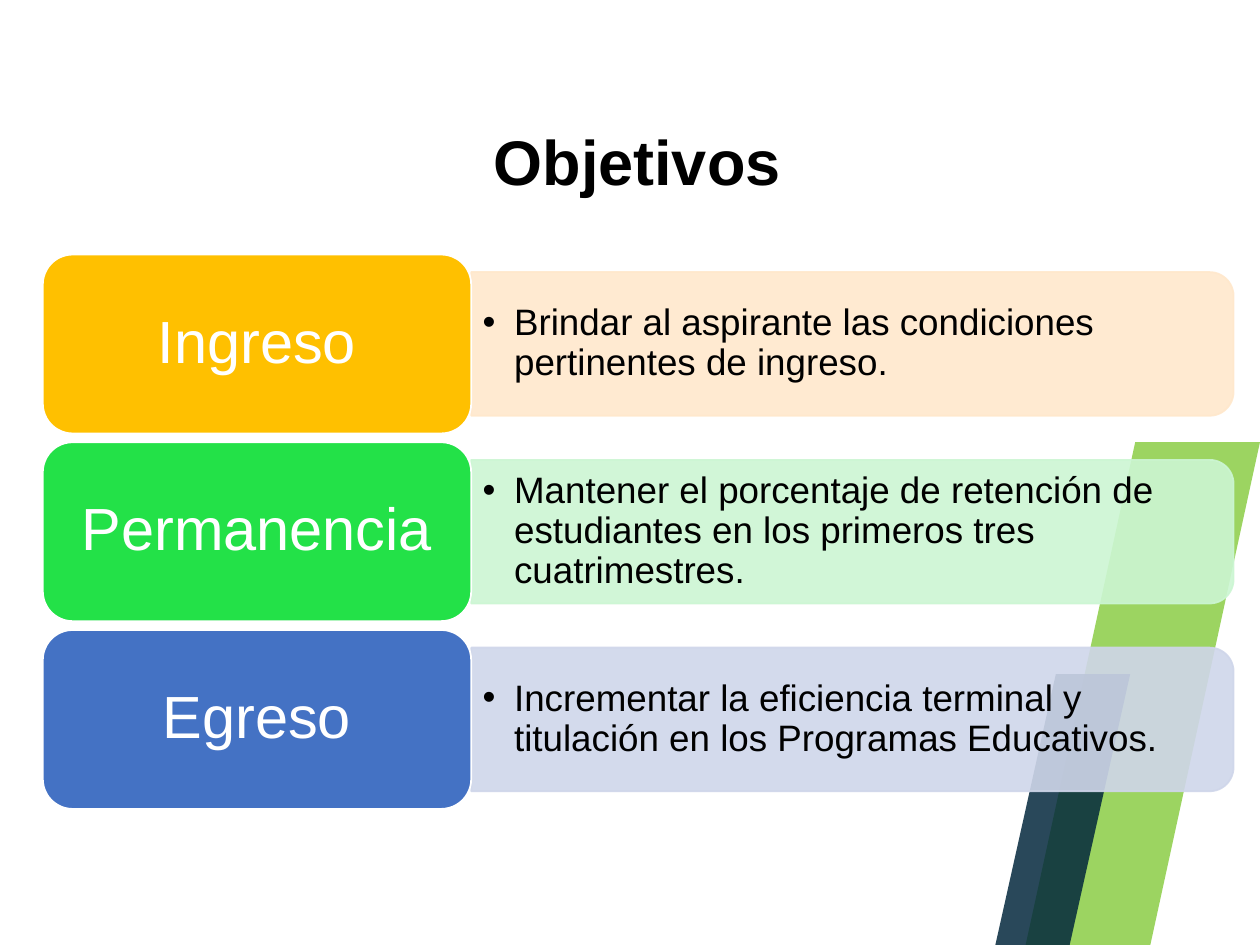
from typing import NamedTuple

from lxml import etree
from pptx import Presentation, util as u
from pptx.dml.color import RGBColor
from pptx.enum import shapes, text
from pptx.oxml import ns

Inches = u.Inches


class Objective(NamedTuple):
    label: str
    description: str
    label_color: str
    panel_color: str


class Band(NamedTuple):
    points: list
    color: str
    opacity: int


OBJECTIVES = [
    Objective("Ingreso", "Brindar al aspirante las condiciones pertinentes de ingreso.",
              "FFC000", "FFE8CC"),
    Objective("Permanencia", "Mantener el porcentaje de retención de estudiantes "
              "en los primeros tres cuatrimestres.", "23E148", "CCF6D3"),
    Objective("Egreso", "Incrementar la eficiencia terminal y titulación "
              "en los Programas Educativos.", "4472C4", "CFD6EA"),
]
BANDS = [
    Band([(10, 3.51), (9.01, 3.51), (8.14, 7.5), (9.13, 7.5)], "92D050", 90),
    Band([(8.97, 5.35), (8.38, 5.35), (7.9, 7.5), (8.49, 7.5)], "00263B", 84),
]

LABEL_LEFT, LABEL_WIDTH, LABEL_HEIGHT = 0.34, 3.4, 1.42
FIRST_TOP, ROW_PITCH = 2.02, 1.49
PANEL_LEFT, PANEL_WIDTH, PANEL_HEIGHT = LABEL_LEFT + LABEL_WIDTH, 6.05, 1.14


def set_color(fill, color: str, opacity: int = 100) -> None:
    """Apply a solid hex colour, optionally translucent."""
    fill.solid()
    fill.fore_color.rgb = RGBColor.from_string(color)
    if opacity < 100:
        for color_element in fill._xPr.iter(ns.qn("a:srgbClr")):
            etree.SubElement(color_element, ns.qn("a:alpha"), val=str(opacity * 1000))


def style_shape(shape, color: str, opacity: int = 100, line: str = "",
                line_opacity: int = 100) -> None:
    shape.shadow.inherit = False
    if line:
        shape.line.width = u.Pt(1)
        set_color(shape.line.fill, line, line_opacity)
    else:
        shape.line.fill.background()
    set_color(shape.fill, color, opacity)


def write_text(shape, content: str, *, size: int, color: str = "000000",
               bold: bool = False, align=text.PP_ALIGN.LEFT,
               anchor=text.MSO_ANCHOR.MIDDLE, wrap: bool = True,
               margins: tuple = (0.1, 0.05), spacing: float = 1.0,
               bullet: bool = False) -> None:
    frame = shape.text_frame
    frame.word_wrap = wrap
    frame.vertical_anchor = anchor
    frame.margin_left = frame.margin_right = Inches(margins[0])
    frame.margin_top = frame.margin_bottom = Inches(margins[1])
    paragraph = frame.paragraphs[0]
    paragraph.text = content
    paragraph.alignment = align
    paragraph.line_spacing = spacing
    if bullet:
        properties = paragraph._p.get_or_add_pPr()
        properties.set("marL", str(Inches(0.25)))
        properties.set("indent", str(Inches(-0.25)))
        etree.SubElement(properties, ns.qn("a:buFont"), typeface="Arial")
        etree.SubElement(properties, ns.qn("a:buChar"), char="•")
    font = paragraph.runs[0].font
    font.name, font.size, font.bold = "Arial", u.Pt(size), bold
    font.color.rgb = RGBColor.from_string(color)


def draw_band(slide, band: Band) -> None:
    start, *others = [(Inches(x), Inches(y)) for x, y in band.points]
    builder = slide.shapes.build_freeform(*start)
    builder.add_line_segments(others, close=True)
    style_shape(builder.convert_to_shape(), band.color, band.opacity)


def draw_objective(slide, objective: Objective, top: float) -> None:
    middle = top + LABEL_HEIGHT / 2

    # Panel: turned a quarter so that its rounded corners face right
    panel = slide.shapes.add_shape(
        shapes.MSO_SHAPE.ROUND_2_SAME_RECTANGLE,
        Inches(PANEL_LEFT + (PANEL_WIDTH - PANEL_HEIGHT) / 2),
        Inches(middle - PANEL_WIDTH / 2), Inches(PANEL_HEIGHT), Inches(PANEL_WIDTH))
    panel.rotation = 90
    style_shape(panel, objective.panel_color, 90, objective.panel_color, 90)

    # Description: upright text over the panel
    height = 1.03
    description = slide.shapes.add_textbox(
        Inches(PANEL_LEFT), Inches(middle - height / 2), Inches(5.99), Inches(height))
    write_text(description, objective.description, size=21, margins=(0.09, 0.04),
               spacing=0.9, bullet=True)

    # Label
    label = slide.shapes.add_shape(
        shapes.MSO_SHAPE.ROUNDED_RECTANGLE, Inches(LABEL_LEFT), Inches(top),
        Inches(LABEL_WIDTH), Inches(LABEL_HEIGHT))
    style_shape(label, objective.label_color, line="FFFFFF")
    write_text(label, objective.label, size=34, color="FFFFFF",
               align=text.PP_ALIGN.CENTER, margins=(0.14, 0.07), spacing=0.9)


def main() -> None:
    presentation = Presentation()
    presentation.slide_width, presentation.slide_height = Inches(10), Inches(7.5)
    slide = presentation.slides.add_slide(presentation.slide_layouts[6])

    # Title
    title = slide.shapes.add_textbox(Inches(3.82), Inches(0.92), Inches(2.5), Inches(0.71))
    write_text(title, "Objetivos", size=36, bold=True, wrap=False,
               anchor=text.MSO_ANCHOR.TOP)

    # Slanted decoration
    for band in BANDS:
        draw_band(slide, band)

    # Objectives
    for row, objective in enumerate(OBJECTIVES):
        draw_objective(slide, objective, FIRST_TOP + row * ROW_PITCH)

    presentation.save("out.pptx")


if __name__ == "__main__":
    main()
